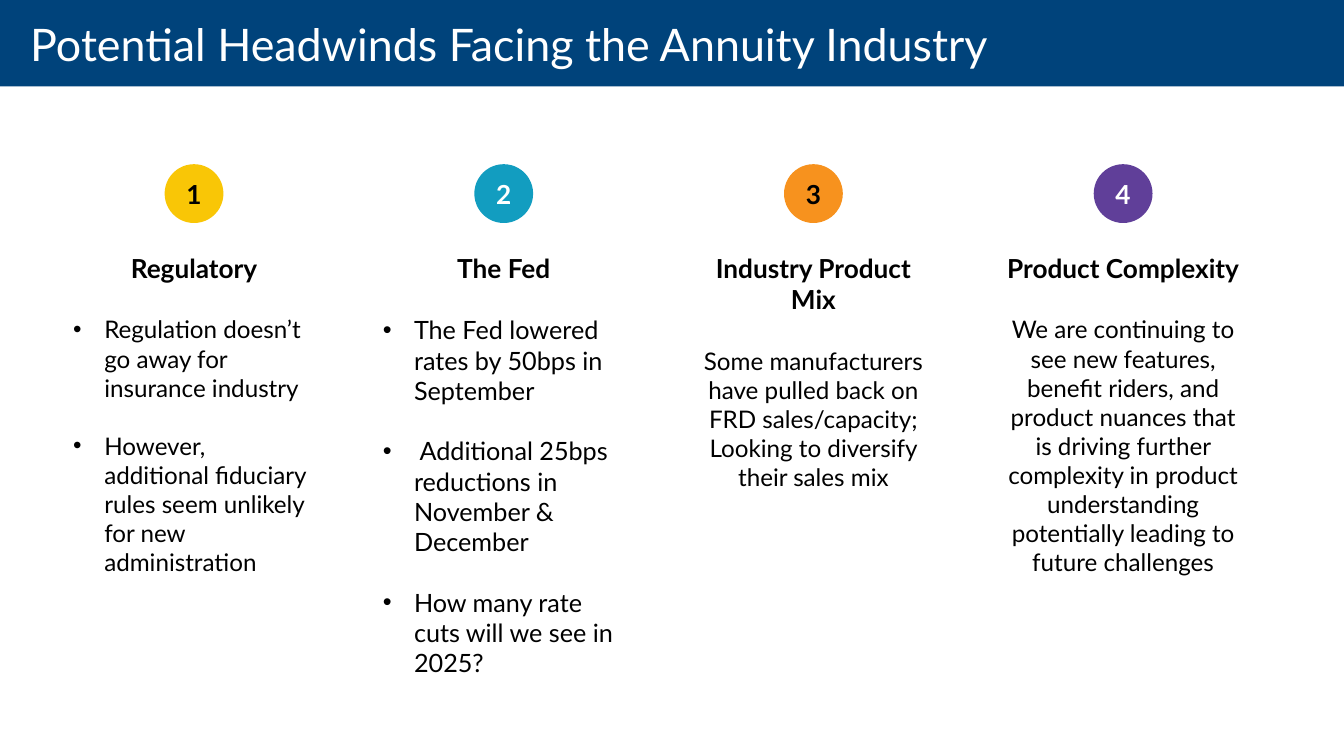
from dataclasses import dataclass

from lxml import etree
from pptx import Presentation
from pptx.dml.color import RGBColor
from pptx.enum.shapes import MSO_SHAPE
from pptx.enum.text import MSO_ANCHOR, MSO_AUTO_SIZE, PP_ALIGN
from pptx.oxml.ns import qn
from pptx.util import Inches, Pt

LEFT, MID = PP_ALIGN.LEFT, PP_ALIGN.CENTER
TOP, MIDDLE = MSO_ANCHOR.TOP, MSO_ANCHOR.MIDDLE
FIXED = MSO_AUTO_SIZE.NONE
OVAL, RECT = MSO_SHAPE.OVAL, MSO_SHAPE.RECTANGLE

NAVY = RGBColor(0x00, 0x43, 0x7B)
GOLD = RGBColor(0xF9, 0xC6, 0x06)
TEAL = RGBColor(0x12, 0x9D, 0xC0)
ORANGE = RGBColor(0xF7, 0x92, 0x1E)
PURPLE = RGBColor(0x60, 0x3F, 0x99)
BLACK = RGBColor(0, 0, 0)
WHITE = RGBColor(0xFF, 0xFF, 0xFF)

FONT = "Lato"
HEAD = 18.7
LINE = 1.2

COLS, ROWS = 160, 90
CELL = Inches(7.5) / ROWS
START, PITCH, WIDTH = 7.5, 36.87, 31.2
DOT, DOT_ROW, TEXT_ROW = 7, 19.55, 29.4
BANNER = 10.3


@dataclass(frozen=True)
class Topic:
    head: str
    items: tuple[str, ...]
    fill: RGBColor
    ink: RGBColor
    rows: float
    size: float = 17.3
    listed: bool = False


TOPICS = (
    Topic("Regulatory",
          ("Regulation doesn’t go away for insurance industry",
           "However, additional fiduciary rules seem unlikely for new administration"),
          GOLD, BLACK, 36.7, listed=True),
    Topic("The Fed",
          ("The Fed lowered rates by 50bps in September",
           " Additional 25bps reductions in November & December",
           "How many rate cuts will we see in 2025?"),
          TEAL, WHITE, 52.3, size=18, listed=True),
    Topic("Industry Product Mix",
          ("Some manufacturers have pulled back on FRD sales/capacity; "
           "Looking to diversify their sales mix",),
          ORANGE, BLACK, 30),
    Topic("Product Complexity",
          ("We are continuing to see new features, benefit riders, and product "
           "nuances that is driving further complexity in product understanding "
           "potentially leading to future challenges",),
          PURPLE, WHITE, 40.2),
)


def cells(*counts: float) -> list[int]:
    return [round(n * CELL) for n in counts]


def place(shape, *box: float) -> None:
    shape.left, shape.top, shape.width, shape.height = cells(*box)


def write(para, text: str, *, size: float = HEAD, color: RGBColor = BLACK,
          bold: bool = False, align=MID, gap: float = 0,
          bullet: bool = False) -> None:
    props = para._p.get_or_add_pPr()
    indent = Inches(0.31) if bullet else 0
    props.set("marL", str(indent))
    props.set("indent", str(-indent))
    if bullet:
        etree.SubElement(props, qn("a:buFont")).set("typeface", "Arial")
        etree.SubElement(props, qn("a:buChar")).set("char", "•")
    else:
        etree.SubElement(props, qn("a:buNone"))
    para.alignment = align
    para.space_before = Pt(gap)
    para.space_after = Pt(0)
    run = para.add_run()
    run.text = text
    font = run.font
    font.name, font.size, font.bold = FONT, Pt(size), bold
    font.color.rgb = color


def block(slide, kind, fill: RGBColor, *box: float):
    shape = slide.shapes.add_shape(kind, *cells(*box))
    shape.shadow.inherit = False
    shape.fill.solid()
    shape.fill.fore_color.rgb = fill
    shape.line.fill.background()
    return shape


def header(slide, text: str) -> None:
    title = slide.shapes.title
    banner = block(slide, RECT, NAVY, 0, 0, COLS, BANNER)
    title._element.addprevious(banner._element)
    place(title, 0, -0.6, COLS, 11.6)
    frame = title.text_frame
    frame.auto_size = FIXED
    frame.vertical_anchor = MIDDLE
    frame.margin_left, frame.margin_right = Inches(0.3), Inches(0.2)
    frame.margin_top = frame.margin_bottom = 0
    write(frame.paragraphs[0], text, size=32, color=WHITE, align=LEFT)


def column(slide, index: int, topic: Topic) -> None:
    left = START + index * PITCH
    dot = block(slide, OVAL, topic.fill,
                left + (WIDTH - DOT) / 2, DOT_ROW, DOT, DOT)
    dot.text_frame.vertical_anchor = MIDDLE
    write(dot.text_frame.paragraphs[0], str(index + 1),
          color=topic.ink, bold=True)

    body = slide.placeholders[index + 1]
    place(body, left, TEXT_ROW, WIDTH, topic.rows)
    frame = body.text_frame
    frame.auto_size = FIXED
    frame.word_wrap = True
    frame.vertical_anchor = TOP
    write(frame.paragraphs[0], topic.head, bold=True)
    above = HEAD
    for item in topic.items:
        write(frame.add_paragraph(), item, size=topic.size,
              align=LEFT if topic.listed else MID,
              gap=round(above * LINE, 1), bullet=topic.listed)
        above = topic.size


def main() -> None:
    deck = Presentation()
    deck.slide_width, deck.slide_height = cells(COLS, ROWS)
    slide = deck.slides.add_slide(deck.slide_layouts.get_by_name("Comparison"))
    header(slide, "Potential Headwinds Facing the Annuity Industry")
    for index, topic in enumerate(TOPICS):
        column(slide, index, topic)
    deck.save("out.pptx")


if __name__ == "__main__":
    main()
